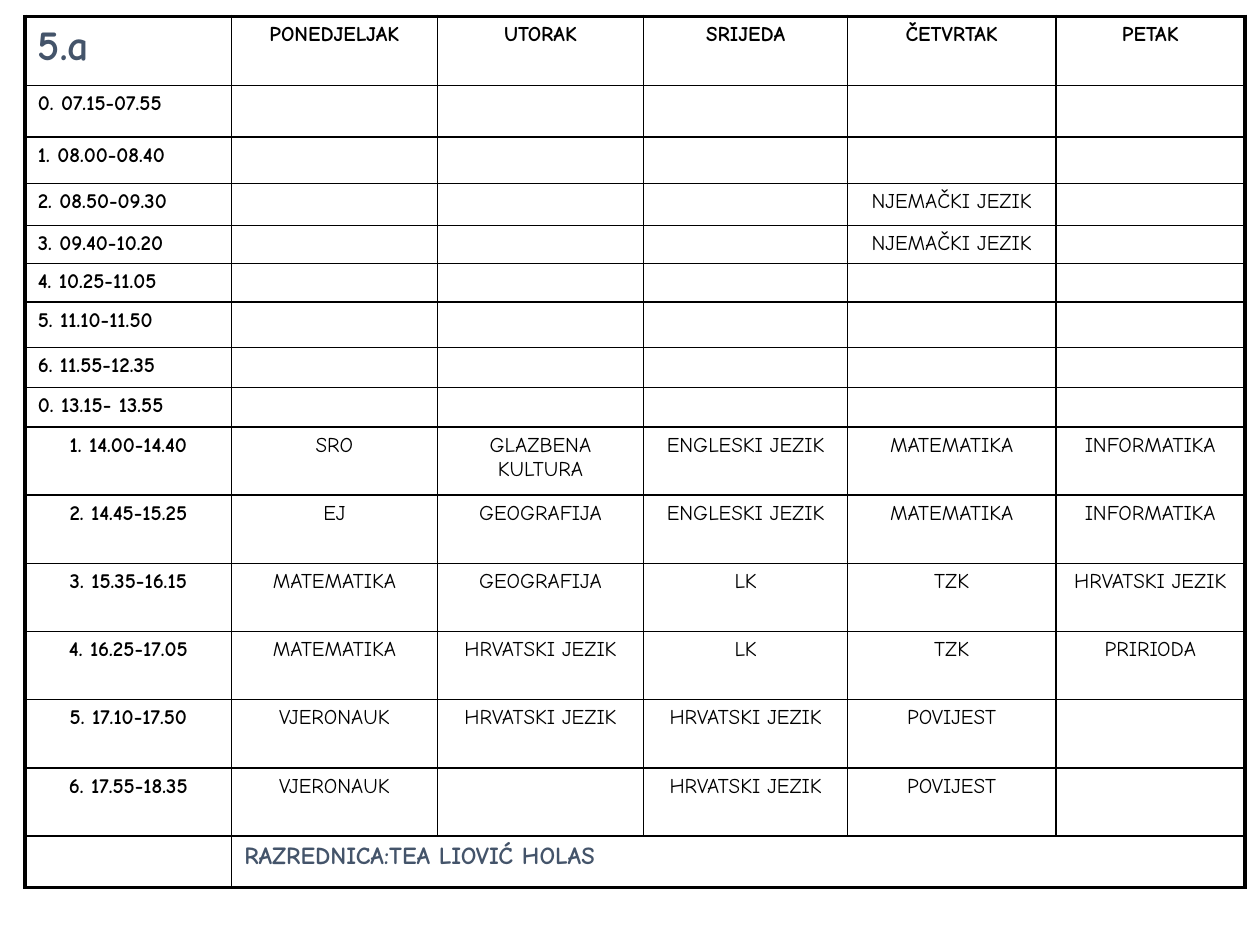
from pptx import Presentation
from pptx.dml.color import RGBColor
from pptx.enum.text import PP_ALIGN
from pptx.oxml.ns import qn
from pptx.util import Pt
from lxml import etree

LEFT, CENTER = PP_ALIGN.LEFT, PP_ALIGN.CENTER

COLUMN_WIDTHS = [118, 117.5, 118, 116.5, 119, 108]
ROW_HEIGHTS = [39.5, 29.5, 26.5, 24, 21.5, 21.5, 26, 23, 22.5] + [39] * 6 + [29.5]
FIRST_AFTERNOON_ROW = 9

TIMETABLE = [
    ["5.a", "PONEDJELJAK", "UTORAK", "SRIJEDA", "ČETVRTAK", "PETAK"],
    # Morning shift
    ["0. 07.15-07.55"],
    ["1. 08.00-08.40"],
    ["2. 08.50-09.30", "", "", "", "NJEMAČKI JEZIK"],
    ["3. 09.40-10.20", "", "", "", "NJEMAČKI JEZIK"],
    ["4. 10.25-11.05"],
    ["5. 11.10-11.50"],
    ["6. 11.55-12.35"],
    # Afternoon shift
    ["0. 13.15- 13.55"],
    ["1. 14.00-14.40", "SRO", "GLAZBENA KULTURA", "ENGLESKI JEZIK", "MATEMATIKA", "INFORMATIKA"],
    ["2. 14.45-15.25", "EJ", "GEOGRAFIJA", "ENGLESKI JEZIK", "MATEMATIKA", "INFORMATIKA"],
    ["3. 15.35-16.15", "MATEMATIKA", "GEOGRAFIJA", "LK", "TZK", "HRVATSKI JEZIK"],
    ["4. 16.25-17.05", "MATEMATIKA", "HRVATSKI JEZIK", "LK", "TZK", "PRIRIODA"],
    ["5. 17.10-17.50", "VJERONAUK", "HRVATSKI JEZIK", "HRVATSKI JEZIK", "POVIJEST"],
    ["6. 17.55-18.35", "VJERONAUK", "", "HRVATSKI JEZIK", "POVIJEST"],
    # Class teacher
    ["", "RAZREDNICA:TEA LIOVIĆ HOLAS"],
]


def color(value):
    return RGBColor.from_string(value)


class SlideBuilder:
    font = "Comic Neue"
    black = "000000"
    accent = "44546A"
    text_size = 12
    thin, thick = 1, 2.25

    def __init__(self, slide):
        self.slide = slide

    def table(self, left, top, widths, heights):
        frame = self.slide.shapes.add_table(
            len(heights), len(widths), Pt(left), Pt(top), Pt(sum(widths)), Pt(sum(heights)))
        table = frame.table
        table.first_row = table.horz_banding = False
        for column, width in zip(table.columns, widths):
            column.width = Pt(width)
        for row, height in zip(table.rows, heights):
            row.height = Pt(height)
        return table

    def borders(self, cell, outer_sides):
        properties = cell._tc.get_or_add_tcPr()
        for side in "LRTB":
            width = self.thick if side in outer_sides else self.thin
            line = etree.SubElement(properties, qn(f"a:ln{side}"), w=str(Pt(width)))
            fill = etree.SubElement(line, qn("a:solidFill"))
            etree.SubElement(fill, qn("a:srgbClr"), val=self.black)
        cell.fill.background()

    def cell_text(self, cell, text, size=text_size, bold=False, ink=black, align=CENTER):
        paragraph = cell.text_frame.paragraphs[0]
        if not text:
            # The end mark keeps an empty row from growing
            etree.SubElement(paragraph._p, qn("a:endParaRPr"), sz=str(size * 100))
            return
        paragraph.text = text
        paragraph.alignment = align
        font = paragraph.runs[0].font
        font.name, font.size, font.bold = self.font, Pt(size), bold
        font.color.rgb = color(ink)


def main():
    presentation = Presentation()
    presentation.slide_width, presentation.slide_height = Pt(720), Pt(540)
    slide = presentation.slides.add_slide(presentation.slide_layouts[6])
    builder = SlideBuilder(slide)

    # Grid
    table = builder.table(14.4, 9.36, COLUMN_WIDTHS, ROW_HEIGHTS)
    last_row, last_column = len(ROW_HEIGHTS) - 1, len(COLUMN_WIDTHS) - 1
    teacher_cell = table.cell(last_row, 1)
    teacher_cell.merge(table.cell(last_row, last_column))

    # Borders and text
    for row in range(last_row + 1):
        for column in range(last_column + 1):
            cell = table.cell(row, column)
            end_column = column + cell.span_width - 1 if cell.is_merge_origin else column
            edges = {"L": column == 0, "R": end_column == last_column,
                     "T": row == 0, "B": row == last_row}
            builder.borders(cell, [side for side, outer in edges.items() if outer])

            texts = TIMETABLE[row]
            text = texts[column] if column < len(texts) else ""
            if (row, column) == (0, 0):
                builder.cell_text(cell, text, 24, True, builder.accent, LEFT)
            elif (row, column) == (last_row, 1):
                builder.cell_text(cell, text, 14, True, builder.accent, LEFT)
            else:
                morning_time = column == 0 and row < FIRST_AFTERNOON_ROW
                builder.cell_text(cell, text, bold=row == 0 or column == 0,
                                  align=LEFT if morning_time else CENTER)

    presentation.save("out.pptx")


if __name__ == "__main__":
    main()
